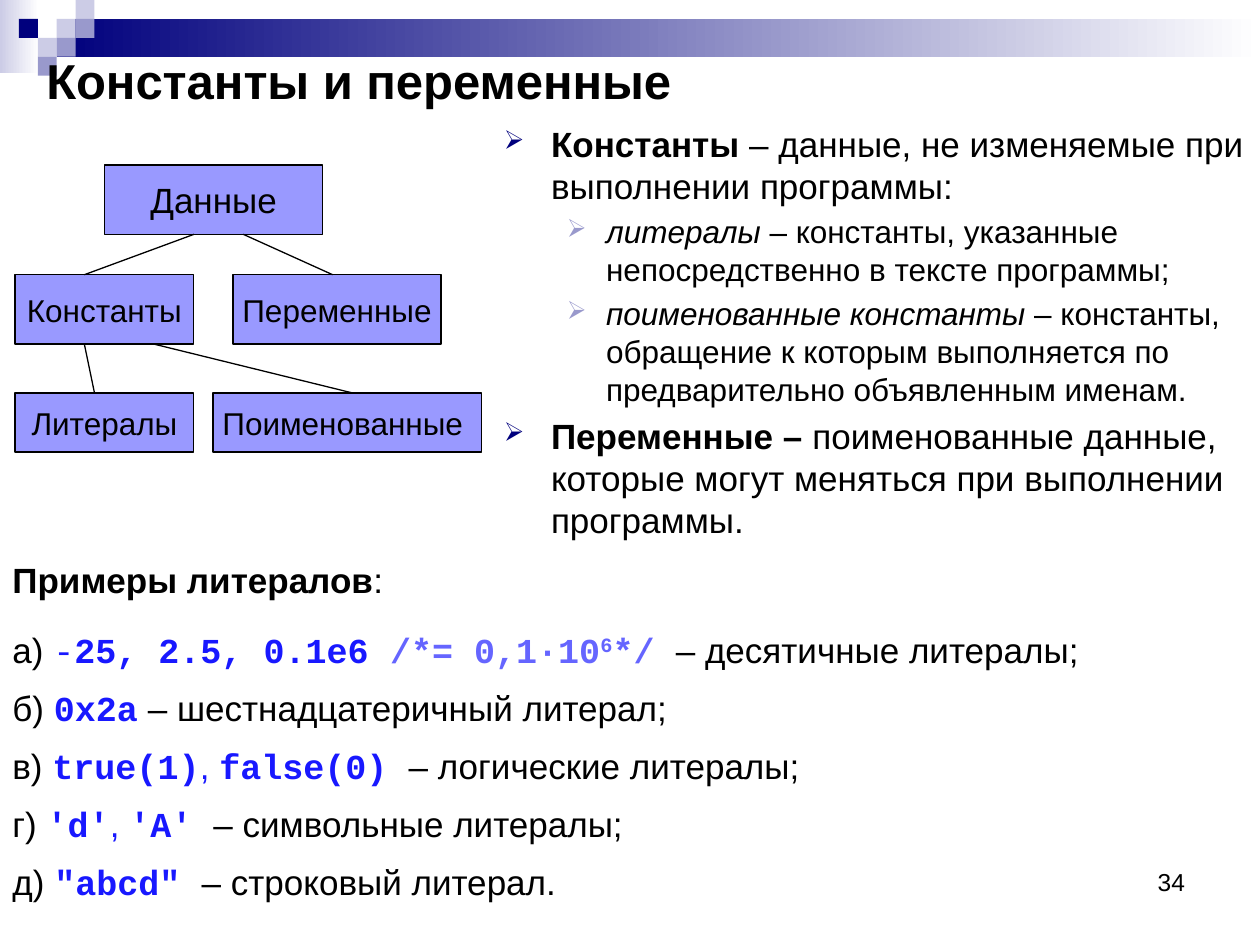
from lxml.etree import SubElement
from pptx import Presentation
from pptx.dml.color import RGBColor
from pptx.enum.shapes import MSO_CONNECTOR, MSO_SHAPE
from pptx.enum.text import MSO_ANCHOR, PP_ALIGN
from pptx.oxml.ns import qn
from pptx.util import Pt

BLACK = RGBColor(0x00, 0x00, 0x00)
WHITE = RGBColor(0xFF, 0xFF, 0xFF)
NAVY = RGBColor(0x00, 0x00, 0x7D)
MIST = RGBColor(0xCC, 0xCC, 0xE6)
STEEL = RGBColor(0x99, 0x99, 0xCC)
LILAC = RGBColor(0x99, 0x99, 0xFF)
BLUE = RGBColor(0x18, 0x18, 0xFF)
PALE = RGBColor(0x65, 0x65, 0xFF)

BOLD = {"bold": True}
ITALIC = {"italic": True}
COMMA = {"color": BLUE}
MINUS = {"face": "Courier New", "color": BLUE}
CODE = {**MINUS, "bold": True}
NOTE = {**CODE, "color": PALE}
POWER = {**NOTE, "base": 30}


class Page:
    """Holds the slide and its style; all lengths are in points."""

    def __init__(self, slide, face="Arial"):
        self.slide = slide
        self.face = face

    def style(self, run, size, bold=False, italic=False, color=BLACK, face=None, base=0):
        font = run.font
        font.size, font.bold, font.italic = Pt(size), bold, italic
        font.name = face or self.face
        font.color.rgb = color
        if base:
            run._r.get_or_add_rPr().set("baseline", str(base * 1000))

    def fill(self, para, parts, size):
        """Fill a paragraph from (text, style) pairs."""
        for text, look in parts:
            run = para.add_run()
            run.text = text
            self.style(run, size, **look)

    def rect(self, left, top, width, height, fill, end=None):
        """Draw a plain rectangle, fading to the end colour if given."""
        shape = self.slide.shapes.add_shape(
            MSO_SHAPE.RECTANGLE, Pt(left), Pt(top), Pt(width), Pt(height))
        shape.shadow.inherit = False
        shape.line.fill.background()
        if end is None:
            shape.fill.solid()
            shape.fill.fore_color.rgb = fill
        else:
            shape.fill.gradient()
            shape.fill.gradient_angle = 0
            for stop, color, place in zip(shape.fill.gradient_stops, (fill, end), (0, 1)):
                stop.color.rgb = color
                stop.position = place
        return shape

    def node(self, left, top, width, height, text, size=18):
        shape = self.rect(left, top, width, height, LILAC)
        shape.line.color.rgb = BLACK
        shape.line.width = Pt(0.75)
        frame = shape.text_frame
        frame.word_wrap = False
        frame.vertical_anchor = MSO_ANCHOR.MIDDLE
        frame.text = text
        para = frame.paragraphs[0]
        para.alignment = PP_ALIGN.CENTER
        self.style(para.runs[0], size)

    def link(self, x1, y1, x2, y2):
        line = self.slide.shapes.add_connector(
            MSO_CONNECTOR.STRAIGHT, Pt(x1), Pt(y1), Pt(x2), Pt(y2))
        line.line.color.rgb = BLACK
        line.line.width = Pt(0.75)
        SubElement(line._element.spPr, qn("a:effectLst"))

    def box(self, left, top, width, height):
        shape = self.slide.shapes.add_textbox(Pt(left), Pt(top), Pt(width), Pt(height))
        shape.text_frame.word_wrap = True
        return shape.text_frame

    def label(self, left, top, width, height, text, size, bold=False,
              align=PP_ALIGN.LEFT, anchor=MSO_ANCHOR.TOP):
        frame = self.box(left, top, width, height)
        frame.vertical_anchor = anchor
        frame.text = text
        para = frame.paragraphs[0]
        para.alignment = align
        self.style(para.runs[0], size, bold)

    def rows(self, left, top, width, height, items):
        """Set rows of (parts, size, indent, hang, before, spacing, bullet)."""
        frame = self.box(left, top, width, height)
        for i, (parts, size, indent, hang, before, spacing, bullet) in enumerate(items):
            para = frame.add_paragraph() if i else frame.paragraphs[0]
            para.space_before = Pt(before)
            para.line_spacing = spacing
            props = para._p.get_or_add_pPr()
            props.set("marL", str(Pt(indent)))
            props.set("indent", str(Pt(-hang)))
            if bullet:
                color, scale = bullet
                tint = SubElement(props, qn("a:buClr"))
                SubElement(tint, qn("a:srgbClr")).set("val", str(color))
                SubElement(props, qn("a:buSzPct")).set("val", str(scale * 1000))
                SubElement(props, qn("a:buChar")).set("char", "➢")
            self.fill(para, parts, size)


def main():
    deck = Presentation()
    deck.slide_width, deck.slide_height = Pt(720), Pt(540)
    page = Page(deck.slides.add_slide(deck.slide_layouts[6]))

    page.rect(0, 0, 22.3, 41.8, MIST, WHITE)
    page.rect(32.4, 10.8, 687.6, 21.6, NAVY, WHITE)
    tile = 10.8
    for col, row, color in [(3, 1, MIST), (4, 0, MIST), (4, 1, STEEL), (2, 2, MIST),
                            (1, 1, NAVY), (3, 2, STEEL), (2, 3, STEEL)]:
        page.rect(col * tile, row * tile, tile, tile, color)

    page.label(516.2, 491.8, 168, 37.4, "34", 14, align=PP_ALIGN.RIGHT)
    page.label(19.4, 31.7, 700.6, 28.1, "Константы и переменные", 28, True,
               anchor=MSO_ANCHOR.MIDDLE)

    def point(*parts):
        return parts, 20, 27, 27, 4, 1.0, (NAVY, 75)

    def sub(*parts):
        return parts, 18, 58.5, 22.5, 3.6, 1.0, (STEEL, 80)

    page.rows(280.8, 66.2, 439.2, 473.8, [
        point(("Константы", BOLD),
              (" – данные, не изменяемые при выполнении программы:", {})),
        sub(("литералы", ITALIC),
            (" – константы, указанные непосредственно в тексте программы;", {})),
        sub(("поименованные константы ", ITALIC),
            ("– константы, обращение к которым выполняется по "
             "предварительно объявленным именам.", {})),
        point(("Переменные – ", BOLD),
              ("поименованные данные, которые могут меняться "
               "при выполнении программы.", {})),
    ])

    page.node(59.8, 94.3, 124.6, 39.6, "Данные", 20)
    page.node(8.6, 157, 102.2, 39.6, "Константы")
    page.node(133.2, 157, 118.8, 39.6, "Переменные")
    page.node(8.6, 224.6, 102.2, 33.8, "Литералы")
    page.node(121.7, 224.6, 153.4, 33.8, "Поименованные ")
    for x1, x2 in [(110.9, 48.2), (139, 190.1)]:
        page.link(x1, 133.9, x2, 157)
    for x1, x2 in [(48.2, 54), (87.8, 201.6)]:
        page.link(x1, 196.6, x2, 224.6)

    def entry(*parts, before=14, spacing=0.8):
        return parts, 20, 27, 27, before, spacing, None

    page.rows(0, 315.4, 699.8, 215.3, [
        entry(("Примеры литералов", BOLD), (":", {}), before=4, spacing=1.0),
        entry(("а) ", {}), ("-", MINUS), ("25, 2.5, 0.1e6 ", CODE), ("/*= 0,1·10", NOTE),
              ("6", POWER), ("*/ ", NOTE), ("– десятичные литералы;", {}),
              before=4, spacing=1.5),
        entry(("б) ", {}), ("0x2a", CODE), (" – шестнадцатеричный литерал;", {})),
        entry(("в) ", {}), ("true(1)", CODE), (", ", COMMA), ("false(0) ", CODE),
              ("– логические литералы;", {})),
        entry(("г) ", {}), ("'d'", CODE), (", ", COMMA), ("'A' ", CODE),
              ("– символьные литералы;", {})),
        entry(("д) ", {}), ("\"abcd\" ", CODE), ("– строковый литерал.", {})),
    ])
    deck.save("out.pptx")


if __name__ == "__main__":
    main()
